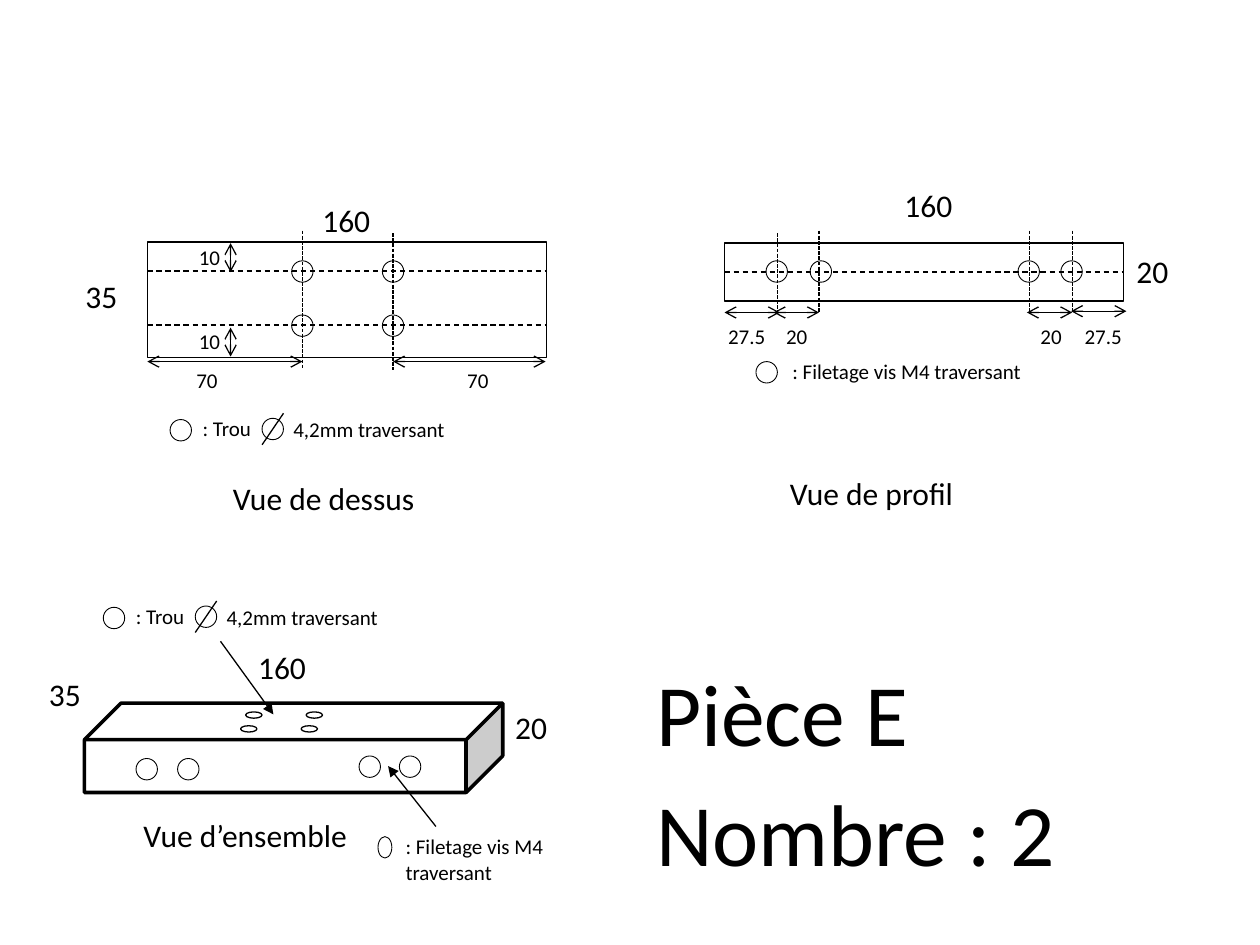
"""Build the drawing sheet of part E: top view, side view and overall view."""
from dataclasses import dataclass
from typing import Optional

from pptx import Presentation
from pptx import util as u
from pptx.dml.color import RGBColor
from pptx.enum import dml, shapes, text
from pptx.oxml.ns import qn
from lxml import etree


@dataclass(frozen=True)
class Theme:
    ink: RGBColor = RGBColor(0, 0, 0)
    paper: RGBColor = RGBColor(255, 255, 255)
    font: str = "Calibri"
    note: int = 12
    label: int = 18
    title: int = 50
    fine: float = 0.5
    thin: float = 0.75
    bold: float = 2


@dataclass(frozen=True)
class Label:
    wording: str
    left: float
    top: float
    width: float
    height: float
    size: int


@dataclass(frozen=True)
class Stroke:
    x1: float
    y1: float
    x2: float
    y2: float
    dash: Optional[dml.MSO_LINE] = None
    head: Optional[str] = None
    tail: Optional[str] = None


THEME = Theme()
PRESET = shapes.MSO_SHAPE
AXIS = dml.MSO_LINE.DASH
HOLE_AXIS = dml.MSO_LINE.SQUARE_DOT
HOLE = 0.17


def draw_label(canvas, label: Label) -> None:
    box = canvas.add_textbox(*map(u.Inches, (label.left, label.top, label.width, label.height)))
    frame = box.text_frame
    frame.word_wrap = True
    frame.auto_size = text.MSO_AUTO_SIZE.SHAPE_TO_FIT_TEXT
    paragraph = frame.paragraphs[0]
    paragraph.text = label.wording
    paragraph.font.name = THEME.font
    paragraph.font.size = u.Pt(label.size)
    paragraph.font.color.rgb = THEME.ink


def draw_outline(canvas, preset: PRESET, left: float, top: float, width: float, height: float,
                 weight: float = THEME.thin, filled: bool = False):
    outline = canvas.add_shape(preset, *map(u.Inches, (left, top, width, height)))
    outline.shadow.inherit = False
    if filled:
        outline.fill.solid()
        outline.fill.fore_color.rgb = THEME.paper
    else:
        outline.fill.background()
    outline.line.color.rgb = THEME.ink
    outline.line.width = u.Pt(weight)
    return outline


def draw_hole(canvas, left: float, top: float, width: float = HOLE) -> None:
    draw_outline(canvas, PRESET.OVAL, left, top, width, HOLE, THEME.fine)


def draw_stroke(canvas, stroke: Stroke):
    line = canvas.add_connector(shapes.MSO_CONNECTOR.STRAIGHT,
                                *map(u.Inches, (stroke.x1, stroke.y1, stroke.x2, stroke.y2)))
    line.line.color.rgb = THEME.ink
    line.line.width = u.Pt(THEME.thin)
    if stroke.dash:
        line.line.dash_style = stroke.dash
    properties = line._element.spPr
    for tag, arrow in (("a:headEnd", stroke.head), ("a:tailEnd", stroke.tail)):
        if arrow:
            etree.SubElement(properties.find(qn("a:ln")), qn(tag), type=arrow)
    etree.SubElement(properties, qn("a:effectLst"))
    return line


def draw_dimension(canvas, x1: float, y1: float, x2: float, y2: float) -> None:
    draw_stroke(canvas, Stroke(x1, y1, x2, y2, head="arrow", tail="arrow"))


def draw_bore_legend(canvas, left: float, top: float, width: float) -> None:
    legend = canvas.add_group_shape().shapes
    draw_hole(legend, left, top + 0.08)
    draw_label(legend, Label(": Trou", left + 0.16, top, 0.72, 0.3, THEME.note))
    draw_hole(legend, left + 0.73, top + 0.07)
    draw_stroke(legend, Stroke(left + 0.9, top + 0.03, left + 0.73, top + 0.28))
    draw_label(legend, Label("4,2mm traversant", left + 0.88, top + 0.01, width, 0.3, THEME.note))


def draw_thread_legend(canvas, left: float, hole_width: float, caption: Label) -> None:
    legend = canvas.add_group_shape().shapes
    draw_hole(legend, left, caption.top + 0.07, hole_width)
    draw_label(legend, caption)


def draw_top_view(canvas) -> None:
    left, right = 1.17, 4.33
    draw_outline(canvas, PRESET.RECTANGLE, left, 1.92, 3.17, 0.92)
    for row in (2.15, 2.58):
        draw_stroke(canvas, Stroke(left, row, right, row, AXIS))
    for edge, caption_top in ((1.93, 1.89), (2.6, 2.56)):
        draw_dimension(canvas, 1.83, edge, 1.83, edge + 0.23)
        draw_label(canvas, Label("10", 1.48, caption_top, 0.38, 0.3, THEME.note))
    for axis, axis_top in ((2.4, 1.83), (3.12, 1.85)):
        column = canvas.add_group_shape().shapes
        for hole_top in (2.07, 2.5):
            draw_hole(column, axis - HOLE / 2, hole_top)
        draw_stroke(column, Stroke(axis, axis_top, axis, axis_top + 1.09, HOLE_AXIS))
    for start, end, caption_left in ((left, 2.4, 1.46), (3.12, right, 3.61)):
        draw_dimension(canvas, start, 2.87, end, 2.87)
        draw_label(canvas, Label("70", caption_left, 2.87, 0.38, 0.3, THEME.note))
    draw_bore_legend(canvas, 1.35, 3.25, 1.52)


def draw_side_view(canvas) -> None:
    left, right = 5.75, 8.92
    profile = draw_outline(canvas, PRESET.RECTANGLE, left, 1.93, right - left, 0.46)
    middle = draw_stroke(canvas, Stroke(left, 2.15, right, 2.15, AXIS))
    middle.begin_connect(profile, 1)
    middle.end_connect(profile, 3)
    for hole_left, axis, axis_top in ((6.08, 6.17, 1.85), (6.43, 6.5, 1.83),
                                      (8.08, 8.17, 1.83), (8.42, 8.51, 1.83)):
        draw_hole(canvas, hole_left, 2.07)
        draw_stroke(canvas, Stroke(axis, axis_top, axis, axis_top + 0.65, HOLE_AXIS))
    for wording, start, end, level, caption_left in (
            ("27.5", 5.75, 6.19, 2.48, 5.68), ("20", 6.14, 6.5, 2.48, 6.14),
            ("20", 8.15, 8.51, 2.48, 8.16), ("27.5", 8.5, 8.94, 2.47, 8.51)):
        draw_dimension(canvas, start, level, end, level)
        draw_label(canvas, Label(wording, caption_left, 2.52, 0.57, 0.3, THEME.note))
    draw_thread_legend(canvas, 6, HOLE, Label(": Filetage vis M4 traversant",
                                              6.19, 2.8, 2.54, 0.3, THEME.note))


def draw_overall_view(canvas) -> None:
    bar = draw_outline(canvas, PRESET.CUBE, 0.67, 5.58, 3.32, 0.71, THEME.bold, filled=True)
    bar.adjustments[0] = 0.41
    for lefts, top in (((1.08, 1.41), 6.02), ((2.85, 3.17), 6)):
        pair = canvas.add_group_shape().shapes
        for left in lefts:
            draw_hole(pair, left, top)
    for left in (1.91, 2.39):
        pair = canvas.add_group_shape().shapes
        for shift, top in ((0.04, 5.65), (0, 5.76)):
            draw_outline(pair, PRESET.OVAL, left + shift, top, 0.13, 0.05, filled=True)
    draw_stroke(canvas, Stroke(1.75, 5.09, 2.17, 5.67, tail="triangle"))
    draw_bore_legend(canvas, 0.82, 4.74, 1.72)
    draw_stroke(canvas, Stroke(3.46, 6.56, 3.08, 6.08, tail="triangle"))
    draw_thread_legend(canvas, 3, 0.11, Label(": Filetage vis M4 traversant",
                                              3.12, 6.57, 1.62, 0.5, THEME.note))


CAPTIONS = (
    Label("160", 2.46, 1.55, 0.75, 0.4, THEME.label),
    Label("35", 0.58, 2.15, 0.75, 0.71, THEME.label),
    Label("Vue de dessus", 1.75, 3.75, 2.39, 0.42, THEME.label),
    Label("160", 7.08, 1.43, 0.75, 0.4, THEME.label),
    Label("20", 8.92, 1.95, 0.75, 0.4, THEME.label),
    Label("Vue de profil", 6.17, 3.71, 2.39, 0.42, THEME.label),
    Label("160", 1.95, 5.09, 0.75, 0.4, THEME.label),
    Label("35", 0.29, 5.31, 0.75, 0.71, THEME.label),
    Label("20", 3.99, 5.57, 0.75, 0.4, THEME.label),
    Label("Vue d’ensemble", 1.04, 6.43, 2.39, 0.42, THEME.label),
    Label("Pièce E", 5.11, 5.18, 4.45, 0.94, THEME.title),
    Label("Nombre : 2", 5.11, 6.13, 4.45, 0.94, THEME.title),
)


def main() -> None:
    deck = Presentation()
    deck.slide_width, deck.slide_height = u.Inches(10), u.Inches(7.5)
    canvas = deck.slides.add_slide(deck.slide_layouts[6]).shapes
    for draw_view in (draw_top_view, draw_side_view, draw_overall_view):
        draw_view(canvas)
    for caption in CAPTIONS:
        draw_label(canvas, caption)
    deck.save("out.pptx")


if __name__ == "__main__":
    main()
